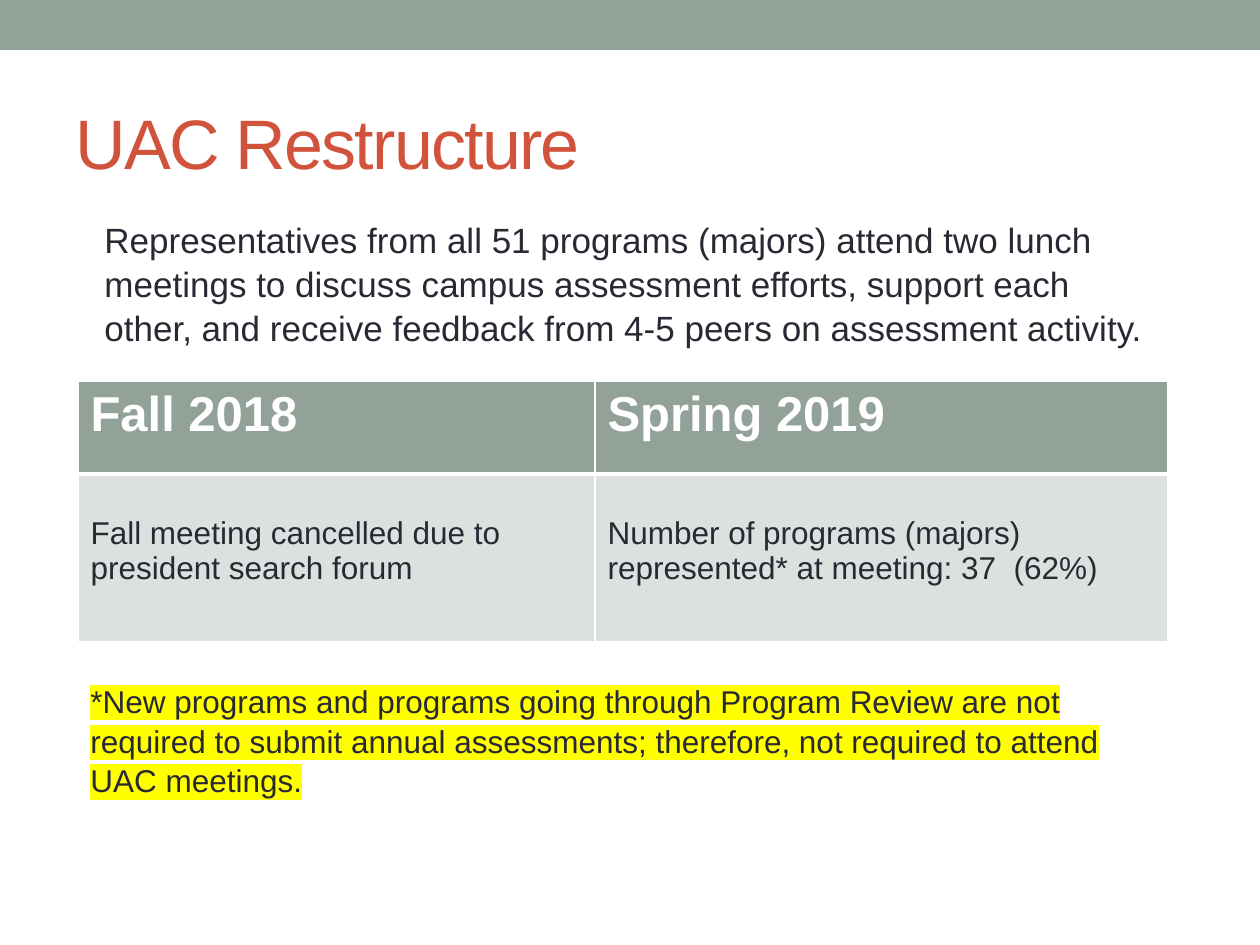
from dataclasses import dataclass

from lxml import etree
from pptx import Presentation
from pptx.dml.color import RGBColor
from pptx.enum.shapes import MSO_SHAPE
from pptx.enum.text import MSO_ANCHOR, MSO_AUTO_SIZE, PP_ALIGN
from pptx.oxml.ns import qn
from pptx.util import Emu, Pt

RECTANGLE = MSO_SHAPE.RECTANGLE
MIDDLE = MSO_ANCHOR.MIDDLE
TOP = MSO_ANCHOR.TOP
LEFT = PP_ALIGN.LEFT
GROW = MSO_AUTO_SIZE.SHAPE_TO_FIT_TEXT
NO_FIT = MSO_AUTO_SIZE.NONE

SAGE = RGBColor(0x93, 0xA2, 0x99)
PALE = RGBColor(0xDC, 0xE0, 0xDE)
RUST = RGBColor(0xD2, 0x53, 0x3C)
INK = RGBColor(0x29, 0x29, 0x34)
WHITE = RGBColor(0xFF, 0xFF, 0xFF)
YELLOW = RGBColor(0xFF, 0xFF, 0x00)

FONT = "Arial"
PX_PER_INCH = 126
TITLE_ONLY = 5


@dataclass
class Style:
    size: int
    color: RGBColor
    bold: bool = False
    highlight: RGBColor | None = None


@dataclass
class Note:
    left: int
    top: int
    width: int
    height: int
    text: str
    style: Style


@dataclass
class Row:
    height: int
    top_margin: int
    fill: RGBColor
    bottom_line: int
    style: Style
    texts: tuple[str, ...]


NOTES = (
    Note(92, 210, 1066, 140,
         "Representatives from all 51 programs (majors) attend two lunch meetings "
         "to discuss campus assessment efforts, support each other, and receive "
         "feedback from 4-5 peers on assessment activity.",
         Style(20, INK)),
    Note(78, 674, 1090, 127,
         "*New programs and programs going through Program Review are not required "
         "to submit annual assessments; therefore, not required to attend UAC meetings.",
         Style(18, INK, highlight=YELLOW)),
)
COLUMNS = (517, 573)
ROWS = (
    Row(93, 6, SAGE, 3, Style(28, WHITE, bold=True), ("Fall 2018", "Spring 2019")),
    Row(168, 42, PALE, 1, Style(18, INK),
        ("Fall meeting cancelled due to president search forum",
         "Number of programs (majors) represented* at meeting: 37  (62%)")),
)


def px(length: int) -> Emu:
    return Emu(round(length * 914400 / PX_PER_INCH))


def add_span(para, text: str, style: Style):
    span = para.add_run()
    span.text = text
    span.font.size = Pt(style.size)
    span.font.bold = style.bold
    span.font.color.rgb = style.color
    span.font.name = FONT
    if style.highlight is not None:
        mark = etree.Element(qn("a:highlight"))
        etree.SubElement(mark, qn("a:srgbClr"), val=str(style.highlight))
        span.font._element.find(qn("a:solidFill")).addnext(mark)
    return span


def add_band(page) -> None:
    band = page.shapes.add_shape(RECTANGLE, 0, 0, px(1260), px(50))
    band.shadow.inherit = False
    band.fill.solid()
    band.fill.fore_color.rgb = SAGE
    band.line.fill.background()


def set_title(page, text: str) -> None:
    title = page.shapes.title
    title.left, title.top, title.width, title.height = px(63), px(73), px(1134), px(136)
    frame = title.text_frame
    frame.vertical_anchor = MIDDLE
    frame.auto_size = NO_FIT
    para = frame.paragraphs[0]
    para.alignment = LEFT
    span = add_span(para, text, Style(40, RUST))
    span.font._element.set("spc", "-100")


def add_note(page, note: Note) -> None:
    box = page.shapes.add_textbox(px(note.left), px(note.top), px(note.width), px(note.height))
    frame = box.text_frame
    frame.word_wrap = True
    frame.auto_size = GROW
    para = frame.paragraphs[0]
    para.line_spacing = 1.05
    add_span(para, note.text, note.style)


def set_borders(cell, bottom_line: int) -> None:
    properties = cell._tc.get_or_add_tcPr()
    widths = {"a:lnL": 1, "a:lnR": 1, "a:lnT": 1, "a:lnB": bottom_line}
    for index, (tag, width) in enumerate(widths.items()):
        line = etree.Element(qn(tag), w=str(Pt(width)))
        fill = etree.SubElement(line, qn("a:solidFill"))
        etree.SubElement(fill, qn("a:srgbClr"), val=str(WHITE))
        properties.insert(index, line)


def add_schedule(page) -> None:
    height = sum(row.height for row in ROWS)
    table = page.shapes.add_table(len(ROWS), len(COLUMNS), px(78), px(381),
                                  px(sum(COLUMNS)), px(height)).table
    for column, width in zip(table.columns, COLUMNS):
        column.width = px(width)
    for row_index, row in enumerate(ROWS):
        table.rows[row_index].height = px(row.height)
        for column_index, text in enumerate(row.texts):
            cell = table.cell(row_index, column_index)
            cell.vertical_anchor = TOP
            cell.margin_top = px(row.top_margin)
            cell.fill.solid()
            cell.fill.fore_color.rgb = row.fill
            # Later rows share their upper edge with the row above
            set_borders(cell, row.bottom_line)
            if row_index:
                upper = cell._tc.tcPr.find(qn("a:lnT"))
                upper.set("w", str(Pt(ROWS[row_index - 1].bottom_line)))
            add_span(cell.text_frame.paragraphs[0], text, row.style)


def main() -> None:
    deck = Presentation()
    deck.slide_width, deck.slide_height = px(1260), px(945)
    page = deck.slides.add_slide(deck.slide_layouts[TITLE_ONLY])

    # Heading
    add_band(page)
    set_title(page, "UAC Restructure")

    # Meeting table with the text above and below it
    add_schedule(page)
    for note in NOTES:
        add_note(page, note)

    deck.save("out.pptx")


if __name__ == "__main__":
    main()
